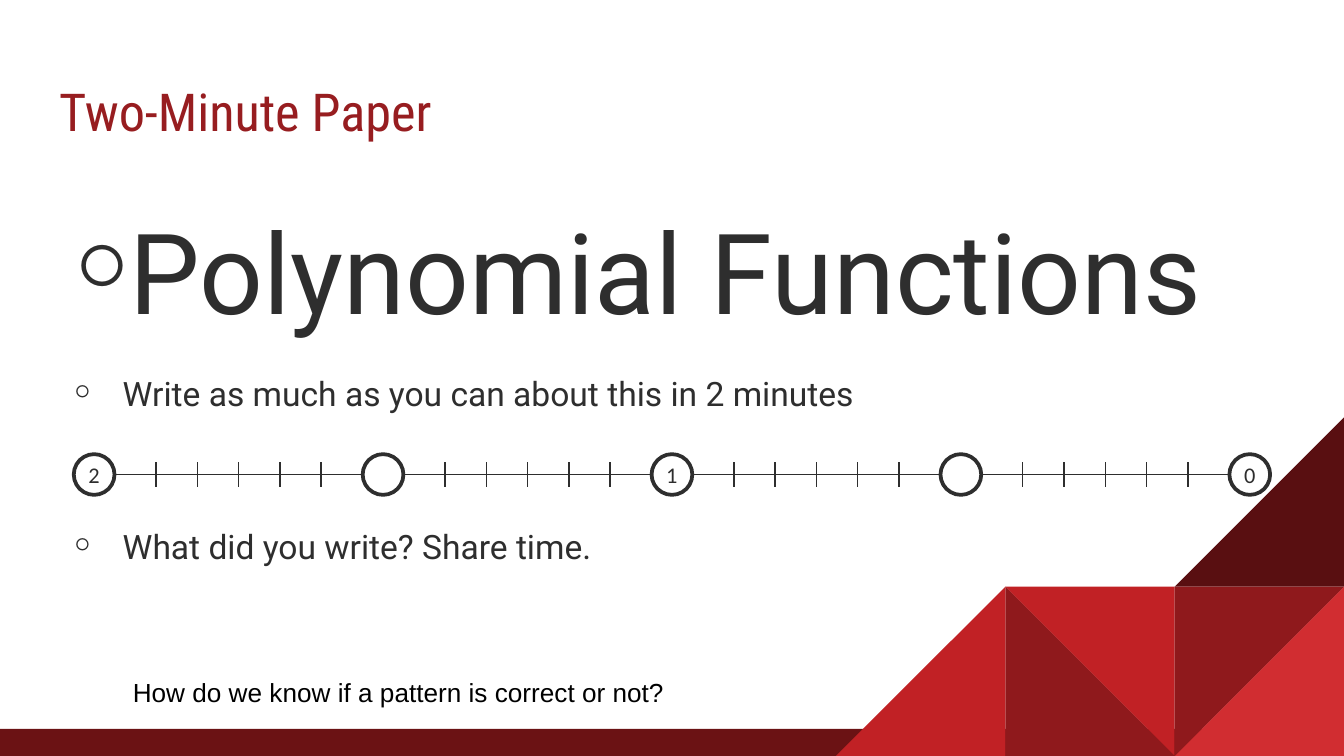
from lxml import etree
from pptx import Presentation
from pptx import util as u
from pptx.dml.color import RGBColor
from pptx.enum import shapes, text
from pptx.oxml.ns import qn

BAR = RGBColor(0x6B, 0x12, 0x14)
TITLE = RGBColor(0x97, 0x1D, 0x20)
INK = RGBColor(0x2E, 0x2E, 0x2E)
BLACK = RGBColor(0, 0, 0)
WHITE = RGBColor(0xFF, 0xFF, 0xFF)
RED = RGBColor(0xC1, 0x21, 0x25)
LIGHT_RED = RGBColor(0xD1, 0x2D, 0x31)
DARK_RED = RGBColor(0x8F, 0x19, 0x1C)
DEEP_RED = RGBColor(0x59, 0x0F, 0x11)
MSO = shapes.MSO_SHAPE


class SlideBuilder:
    """Lengths are in centimetres, text sizes in points."""

    def __init__(self, slide):
        self.s = slide

    def shape(self, kind, x, y, w, h, fill, line=None, rotation=0):
        sp = self.s.shapes.add_shape(kind, u.Cm(x), u.Cm(y), u.Cm(w), u.Cm(h))
        sp.shadow.inherit = False
        sp.rotation = rotation
        sp.fill.solid()
        sp.fill.fore_color.rgb = fill
        if line is None:
            sp.line.fill.background()
        else:
            sp.line.color.rgb = line
            sp.line.width = u.Pt(2)
        return sp

    def line(self, x1, y1, x2, y2):
        c = self.s.shapes.add_connector(
            shapes.MSO_CONNECTOR.STRAIGHT, u.Cm(x1), u.Cm(y1), u.Cm(x2), u.Cm(y2))
        c.line.color.rgb = INK
        c.line.width = u.Pt(0.75)
        etree.SubElement(c._element.spPr, qn("a:effectLst"))

    def text_frame(self, x, y, w, h, wrap=True):
        tf = self.s.shapes.add_textbox(u.Cm(x), u.Cm(y), u.Cm(w), u.Cm(h)).text_frame
        tf.word_wrap = wrap
        tf.margin_left = tf.margin_right = u.Cm(0.25)
        tf.margin_top = tf.margin_bottom = u.Cm(0.25 if wrap else 0.13)
        return tf

    def set_text(self, p, words, size, font, color):
        p.text = words
        p.font.size = u.Pt(size)
        p.font.name = font
        p.font.color.rgb = color

    def bullet(self, p, char):
        """Give the paragraph a hanging bullet."""
        pPr = p._p.get_or_add_pPr()
        pPr.set("marL", str(u.Cm(1.2)))
        pPr.set("indent", str(u.Cm(-0.92)))
        mark = etree.Element(qn("a:buChar"), char=char)
        font = etree.Element(qn("a:buFont"), typeface="Roboto")
        run_style = pPr.find(qn("a:defRPr"))
        run_style.addprevious(font)
        run_style.addprevious(mark)

    def marker(self, x, y, label):
        """Draw a timeline circle centred on x, y."""
        size = 0.77
        sp = self.shape(MSO.OVAL, x - size / 2, y - size / 2, size, size, WHITE, INK)
        if label:
            tf = sp.text_frame
            tf.margin_left = tf.margin_right = 0
            tf.margin_top = tf.margin_bottom = u.Cm(0.1)
            tf.vertical_anchor = text.MSO_ANCHOR.MIDDLE
            p = tf.paragraphs[0]
            p.alignment = text.PP_ALIGN.CENTER
            self.set_text(p, label, 12, "Calibri", INK)

    def timeline(self, x, y, step, labels, ticks=5):
        """Markers one step apart, with evenly spaced ticks between them."""
        pitch = step / (ticks + 2)
        last = len(labels) - 1
        self.line(x, y, x + last * step, y)
        for i, label in enumerate(labels):
            center = x + i * step
            self.marker(center, y, label)
            if i < last:
                for k in range(ticks):
                    tick = center + (k + 1.5) * pitch
                    self.line(tick, y - 0.23, tick, y + 0.23)


def main():
    prs = Presentation()
    prs.slide_width, prs.slide_height = u.Cm(25.4), u.Cm(14.29)
    b = SlideBuilder(prs.slides.add_slide(prs.slide_layouts[6]))

    b.shape(MSO.RECTANGLE, 0, 13.78, 25.4, 0.51, BAR)

    # Square tiles counted from the bottom right corner; the rotation
    # puts the right angle at 0 bottom left, 90 top left, 180 top right,
    # 270 bottom right.
    tile = 3.2
    for column, row, rotation, color in (
        (2, 1, 180, RED),
        (2, 1, 0, DARK_RED),
        (3, 1, 270, RED),
        (1, 2, 270, DEEP_RED),
        (1, 1, 270, LIGHT_RED),
        (1, 1, 90, DARK_RED),
    ):
        b.shape(MSO.RIGHT_TRIANGLE, 25.4 - column * tile, 14.29 - row * tile,
                tile, tile, color, rotation=rotation)

    tf = b.text_frame(0.87, 1.24, 23.67, 1.6)
    b.set_text(tf.paragraphs[0], "Two-Minute Paper", 28, "Roboto Condensed", TITLE)

    tf = b.text_frame(0.87, 3.2, 23.67, 9.5)
    for i, (words, size, before) in enumerate((
        ("Polynomial Functions", 60, 0),
        ("Write as much as you can about this in 2 minutes", 18, 0),
        ("What did you write? Share time.", 18, 41),
    )):
        p = tf.add_paragraph() if i else tf.paragraphs[0]
        p.line_spacing = 1.15
        p.space_before, p.space_after = u.Pt(before), u.Pt(16)
        b.set_text(p, words, size, "Roboto", INK)
        b.bullet(p, "￮")

    b.timeline(1.78, 8.97, 5.46, ("2", "", "1", "", "0"))

    tf = b.text_frame(2.26, 12.65, 10.59, 0.86, wrap=False)
    b.set_text(tf.paragraphs[0], "How do we know if a pattern is correct or not?",
               14, "Arial", BLACK)

    prs.save("out.pptx")


if __name__ == "__main__":
    main()
